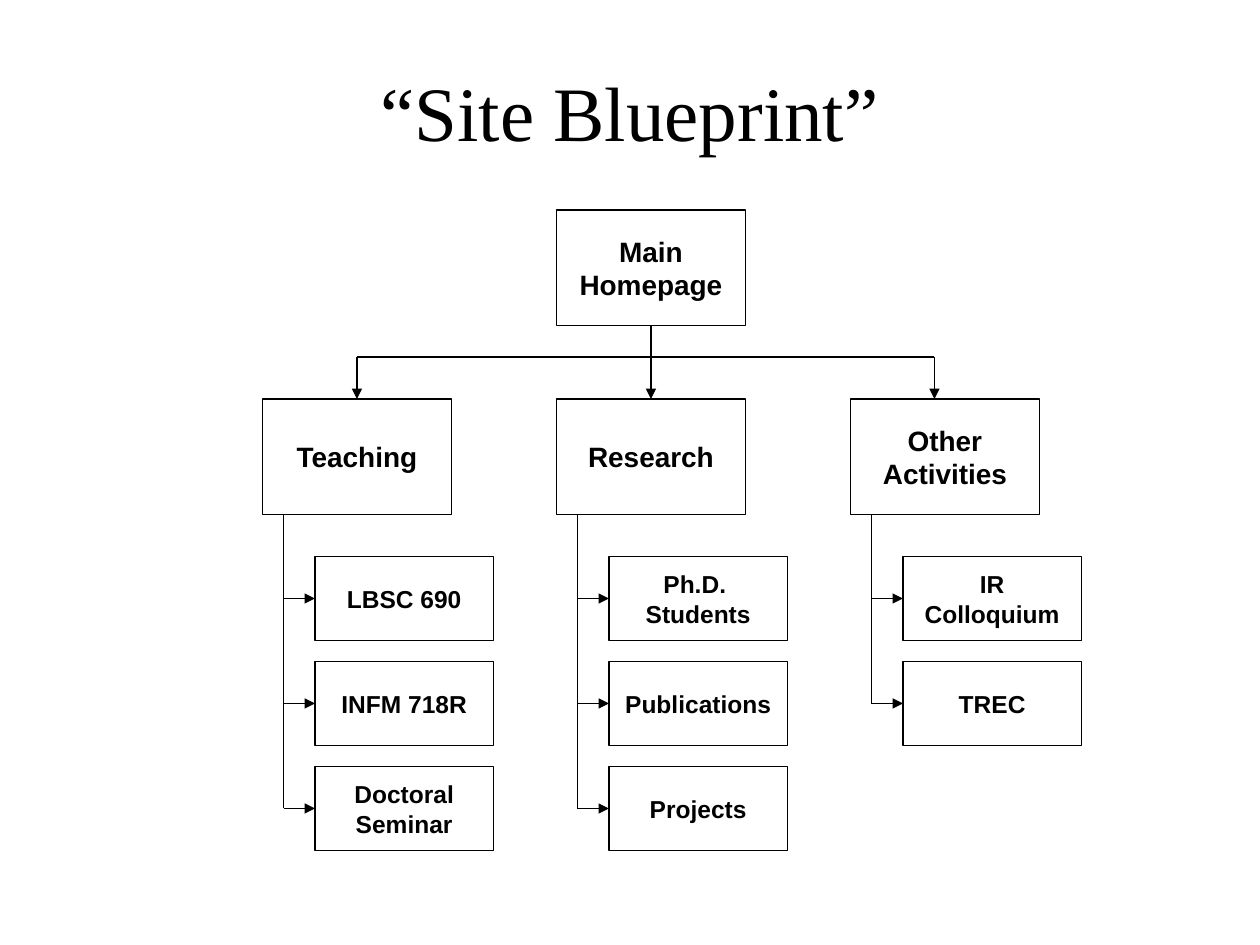
from lxml import etree
from pptx import Presentation
from pptx.dml.color import RGBColor
from pptx.enum import shapes, text
from pptx.oxml import ns
from pptx.util import Pt

COLOURS = {"ink": "000000", "paper": "FFFFFF"}
SECTION_WIDTH, SECTION_HEIGHT, SECTION_STEP = 108, 66, 168
PAGE_WIDTH, PAGE_HEIGHT, PAGE_STEP = 102, 48, 60
TOP, LEFT, BOTTOM = 0, 1, 2
SECTIONS = [
    ("Teaching", 54, ["LBSC 690", "INFM 718R", "Doctoral\nSeminar"]),
    ("Research", 54, ["Ph.D. \nStudents", "Publications", "Projects"]),
    ("Other\nActivities", 48, ["IR\nColloquium", "TREC"]),
]


def colour(name):
    return RGBColor.from_string(COLOURS[name])


def write(shape, content, size, font="Arial", bold=False, wrap=False):
    frame = shape.text_frame
    frame.word_wrap = wrap
    frame.vertical_anchor = text.MSO_ANCHOR.MIDDLE
    frame.text = content
    for paragraph in frame.paragraphs:
        paragraph.alignment = text.PP_ALIGN.CENTER
        for run in paragraph.runs:
            run.font.name = font
            run.font.size = Pt(size)
            run.font.bold = bold
            run.font.color.rgb = colour("ink")


def add_box(slide, left, top, width, height, content, size):
    box = slide.shapes.add_shape(
        shapes.MSO_SHAPE.RECTANGLE, Pt(left), Pt(top), Pt(width), Pt(height))
    box.shadow.inherit = False
    box.fill.background()
    box.line.color.rgb = colour("ink")
    box.line.width = Pt(0.75)
    write(box, content, size, bold=True)
    return box


def add_line(slide, x1, y1, x2, y2, arrow=False, begin=None, end=None):
    line = slide.shapes.add_connector(
        shapes.MSO_CONNECTOR.STRAIGHT, Pt(x1), Pt(y1), Pt(x2), Pt(y2))
    line.line.color.rgb = colour("ink")
    line.line.width = Pt(0.75)
    if arrow:
        etree.SubElement(line.line._get_or_add_ln(), ns.qn("a:tailEnd"), type="triangle")
    etree.SubElement(line._element.spPr, ns.qn("a:effectLst"))
    if begin:
        line.begin_connect(*begin)
    if end:
        line.end_connect(*end)


def add_title(slide, left, top, width, height):
    title = slide.shapes.add_textbox(Pt(left), Pt(top), Pt(width), Pt(height))
    write(title, "“Site Blueprint”", 44, font="Times New Roman", wrap=True)


def add_section(slide, left, top, name, pages):
    section = add_box(slide, left, top, SECTION_WIDTH, SECTION_HEIGHT, name, 16)
    trunk = left + 12
    page_left = left + 30
    for index, page_name in enumerate(pages):
        page_top = top + 90 + index * PAGE_STEP
        middle = page_top + PAGE_HEIGHT / 2
        page = add_box(slide, page_left, page_top, PAGE_WIDTH, PAGE_HEIGHT, page_name, 14)
        add_line(slide, trunk, middle, page_left, middle, arrow=True, end=(page, LEFT))
    add_line(slide, trunk, middle, trunk, top + SECTION_HEIGHT)
    return section


def add_site_map(slide, left, top):
    home_left = left + SECTION_STEP
    home = add_box(slide, home_left, top, SECTION_WIDTH, SECTION_HEIGHT, "Main\nHomepage", 16)
    bus, section_top = top + 84, top + 108
    drops = []
    for index, (name, drop_offset, pages) in enumerate(SECTIONS):
        section_left = left + index * SECTION_STEP
        section = add_section(slide, section_left, section_top, name, pages)
        drop = section_left + drop_offset
        drops.append(drop)
        under_home = section_left == home_left
        centred = drop_offset == SECTION_WIDTH / 2
        add_line(slide, drop, top + SECTION_HEIGHT if under_home else bus, drop, section_top,
                 arrow=True, begin=(home, BOTTOM) if under_home else None,
                 end=(section, TOP) if centred else None)
    add_line(slide, drops[0], bus, drops[-1], bus)


def main():
    presentation = Presentation()
    presentation.slide_width, presentation.slide_height = Pt(720), Pt(540)
    slide = presentation.slides.add_slide(presentation.slide_layouts[6])
    slide.background.fill.solid()
    slide.background.fill.fore_color.rgb = colour("paper")
    add_title(slide, 54, 18, 612, 90)
    add_site_map(slide, 150, 120)
    presentation.save("out.pptx")


if __name__ == "__main__":
    main()
